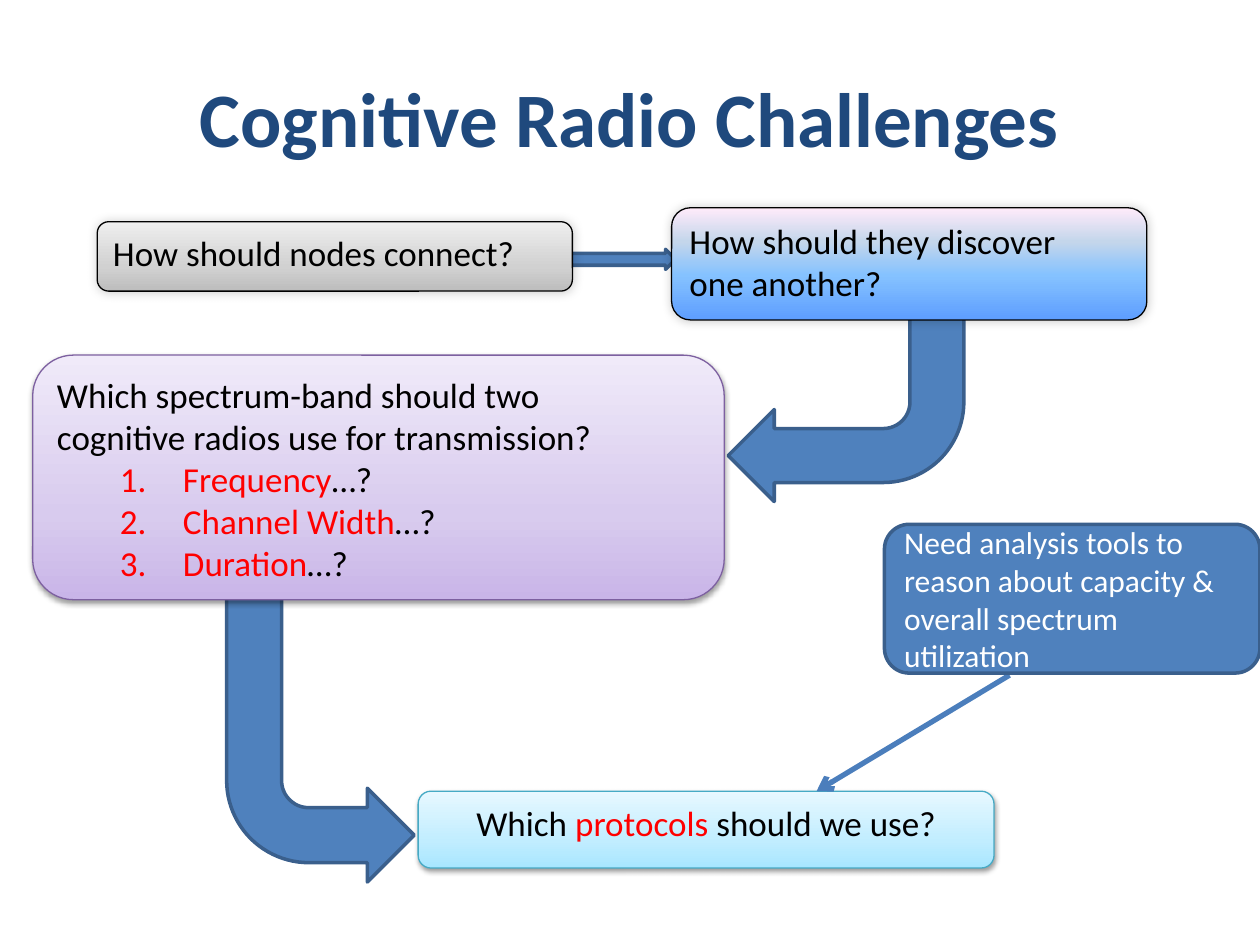
from lxml.etree import SubElement
from pptx import Presentation
from pptx.dml.color import RGBColor
from pptx.enum.shapes import MSO_CONNECTOR as Link, MSO_SHAPE as Shape
from pptx.enum.text import MSO_ANCHOR as Anchor, PP_ALIGN as Align
from pptx.oxml import parse_xml
from pptx.oxml.ns import nsdecls, qn
from pptx.util import Cm, Pt

FONT = "Calibri"
BLACK, RED, WHITE, NAVY = "000000", "FF0000", "FFFFFF", "1F497D"
BLUE, BLUE_EDGE, LINK_BLUE = "4F81BD", "3A5F8C", "4B7EBC"

# Shadow: opacity %, blur pt, distance pt, direction in degrees
SOFT, DROP = (20, 6, 0, 225), (38, 3.1, 1.6, 90)

# Places are left, top, width, height in cm
TITLE = ("Cognitive Radio Challenges", (1.27, 0.76, 22.86, 3.18))

# Paragraphs are lists of (text, colour) spans
CONNECT = dict(
    place=(1.96, 4.47, 9.58, 1.4), edge=BLACK, shadow=SOFT,
    stops=[(0, "BDBDBD"), (35, "D1D1D1"), (100, "EEEEEE")],
    lines=[[("How should nodes connect?", BLACK)]])
DISCOVER = dict(
    place=(13.54, 4.19, 9.58, 2.26), edge=BLACK, shadow=SOFT,
    stops=[(0, "5E9EFF"), (40, "85C2FF"), (70, "C4D6EB"), (100, "FFEBFA")],
    lines=[[("How should they discover", BLACK)], [("one another?", BLACK)]])
SPECTRUM = dict(
    place=(0.66, 7.16, 13.94, 4.93), edge="7D60A0", shadow=DROP,
    stops=[(0, "C9B5E8"), (35, "D8CBEE"), (100, "F0EAF9")],
    lines=[[("Which spectrum-band should two", BLACK)],
           [("cognitive radios use for transmission?", BLACK)]],
    numbered=[[(term, RED), ("…?", BLACK)]
              for term in ("Frequency", "Channel Width", "Duration")])
PROTOCOLS = dict(
    place=(8.43, 15.95, 11.61, 1.55), edge="46AAC5", shadow=DROP,
    stops=[(0, "A7E6FF"), (35, "C1EDFF"), (100, "E7F8FF")],
    lines=[[("Which ", BLACK), ("protocols", RED), (" should we use?", BLACK)]],
    align=Align.CENTER)
TOOLS = dict(
    place=(17.83, 10.57, 7.57, 3.0), edge=BLUE_EDGE, weight=2, size=18,
    anchor=Anchor.MIDDLE,
    lines=[[("Need analysis tools to reason about capacity & "
             "overall spectrum utilization", WHITE)]])

CONNECT_TO_DISCOVER = (11.18, 4.62, 2.44, 0.81)
DISCOVER_TO_SPECTRUM = (14.68, 6.4, 4.75, 3.71)
SPECTRUM_TO_PROTOCOLS = (4.57, 11.89, 3.78, 5.89)
TOOLS_TO_PROTOCOLS = (20.35, 13.61, 16.46, 15.95)


def cm(lengths):
    return [Cm(length) for length in lengths]


def rgb(colour):
    return RGBColor.from_string(colour)


def paint(shape, fill, edge, weight):
    shape.shadow.inherit = False
    shape.fill.solid()
    shape.fill.fore_color.rgb = rgb(fill)
    shape.line.color.rgb = rgb(edge)
    shape.line.width = Pt(weight)


def add_gradient(shape, stops):
    """Replace the solid fill by a gradient that runs from bottom to top."""
    marks = "".join(f'<a:gs pos="{pos * 1000}"><a:srgbClr val="{colour}"/></a:gs>'
                    for pos, colour in stops)
    solid = shape.element.spPr.find(qn("a:solidFill"))
    solid.getparent().replace(solid, parse_xml(
        f'<a:gradFill {nsdecls("a")} rotWithShape="1"><a:gsLst>{marks}</a:gsLst>'
        '<a:lin ang="16200000" scaled="0"/></a:gradFill>'))


def add_shadow(shape, opacity, blur, distance, direction):
    effects = shape.element.spPr.find(qn("a:effectLst"))
    outer = SubElement(effects, qn("a:outerShdw"), blurRad=str(Pt(blur)),
                       dist=str(Pt(distance)), dir=str(direction * 60000),
                       rotWithShape="0")
    colour = SubElement(outer, qn("a:srgbClr"), val=BLACK)
    SubElement(colour, qn("a:alpha"), val=str(opacity * 1000))


def number(para):
    para.level = 1
    props = para._p.get_or_add_pPr()
    props.set("marL", str(Cm(2.54)))
    props.set("indent", str(Cm(-1.27)))
    props.insert(0, parse_xml(
        f'<a:buAutoNum {nsdecls("a")} type="arabicPeriod"/>'))


def write(frame, lines, size, align=Align.LEFT, anchor=Anchor.TOP,
          numbered=(), bold=False):
    frame.word_wrap = True
    frame.vertical_anchor = anchor
    for index, spans in enumerate([*lines, *numbered]):
        para = frame.add_paragraph() if index else frame.paragraphs[0]
        para.alignment = align
        para.font.name, para.font.size, para.font.bold = FONT, Pt(size), bold
        if index >= len(lines):
            number(para)
        for text, colour in spans:
            span = para.add_run()
            span.text = text
            span.font.color.rgb = rgb(colour)


def add_box(page, place, edge, lines, weight=0.75, size=20, stops=None,
            shadow=None, **layout):
    box = page.shapes.add_shape(Shape.ROUNDED_RECTANGLE, *cm(place))
    paint(box, BLUE, edge, weight)
    if stops:
        add_gradient(box, stops)
    if shadow:
        add_shadow(box, *shadow)
    write(box.text_frame, lines, size, **layout)


def add_bent_arrow(page, place, to_right):
    """Arrow that starts downwards and then turns right or left."""
    arrow = page.shapes.add_shape(Shape.BENT_ARROW, *cm(place))
    for index, value in enumerate((0.293, 0.25, 0.25, 0.438)):
        arrow.adjustments[index] = value
    arrow.rotation = 180
    if to_right:
        arrow.element.spPr.xfrm.set("flipH", "1")
    paint(arrow, BLUE, BLUE_EDGE, 2)


def add_link(page, ends):
    link = page.shapes.add_connector(Link.STRAIGHT, *cm(ends))
    link.line.color.rgb = rgb(LINK_BLUE)
    link.line.width = Pt(3)
    SubElement(link.line._get_or_add_ln(), qn("a:tailEnd"), type="arrow")
    SubElement(link.element.spPr, qn("a:effectLst"))


def main():
    deck = Presentation()
    deck.slide_width, deck.slide_height = cm((25.4, 19.05))
    page = deck.slides.add_slide(deck.slide_layouts[6])

    add_bent_arrow(page, CONNECT_TO_DISCOVER, to_right=True)
    add_box(page, **CONNECT)
    add_bent_arrow(page, DISCOVER_TO_SPECTRUM, to_right=False)
    add_box(page, **PROTOCOLS)
    add_bent_arrow(page, SPECTRUM_TO_PROTOCOLS, to_right=True)
    add_link(page, TOOLS_TO_PROTOCOLS)
    for box in (TOOLS, DISCOVER, SPECTRUM):
        add_box(page, **box)

    text, place = TITLE
    title = page.shapes.add_textbox(*cm(place))
    write(title.text_frame, [[(text, NAVY)]], 44, Align.CENTER, Anchor.MIDDLE,
          bold=True)
    deck.save("out.pptx")


if __name__ == "__main__":
    main()
